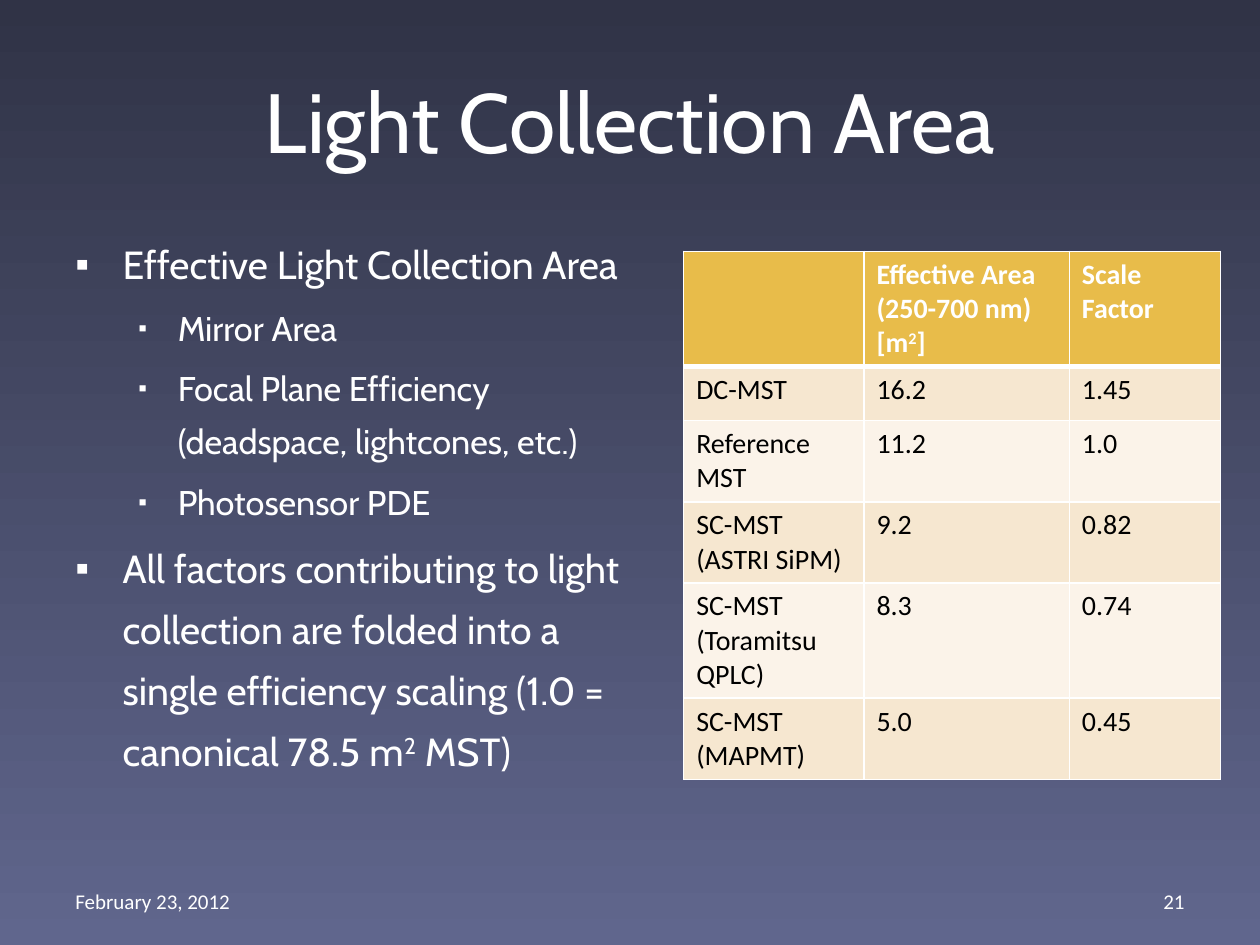
import pptx
import pptx.util
import pptx.dml.color
import pptx.enum.text
import pptx.oxml
import pptx.oxml.ns
from lxml import etree

Pt = pptx.util.Pt
ALIGN = pptx.enum.text.PP_ALIGN
ANCHOR = pptx.enum.text.MSO_ANCHOR
COLORS = {
    "top": "303346", "bottom": "60668D", "white": "FFFFFF", "black": "000000",
    "header": "E8BC4A", "odd": "F6E7D0", "even": "FBF3E9",
}
# Text between carets is superscript.
BULLETS = [
    (0, "Effective Light Collection Area"),
    (1, "Mirror Area"),
    (1, "Focal Plane Efficiency (deadspace, lightcones, etc.)"),
    (1, "Photosensor PDE"),
    (0, "All factors contributing to light collection are folded into a "
        "single efficiency scaling (1.0 = canonical 78.5 m^2^ MST)"),
]
LEVELS = [
    {"size": 22.4, "margin": 27, "indent": -27, "bullet": 100},
    {"size": 19.6, "margin": 58.5, "indent": -22.5, "bullet": 72},
]
TABLE = [
    ("", "Effective Area (250-700 nm) [m^2^]", "Scale Factor"),
    ("DC-MST", "16.2", "1.45"),
    ("Reference MST", "11.2", "1.0"),
    ("SC-MST (ASTRI SiPM)", "9.2", "0.82"),
    ("SC-MST (Toramitsu QPLC)", "8.3", "0.74"),
    ("SC-MST (MAPMT)", "5.0", "0.45"),
]
COLUMN_WIDTHS = [103, 117.4, 86.4]
ROW_HEIGHTS = [65.8, 30.9, 46.4, 46.4, 65.8, 46.4]


def rgb(name):
    return pptx.dml.color.RGBColor.from_string(COLORS[name])


def write(paragraph, text, color="white", **formats):
    for index, piece in enumerate(text.split("^")):
        if not piece:
            continue
        run = paragraph.add_run()
        run.text = piece
        run.font.color.rgb = rgb(color)
        for name, value in formats.items():
            setattr(run.font, name, value)
        if index % 2:
            run._r.get_or_add_rPr().set("baseline", "30000")


def place(shape, left, top, width, height):
    box = {"left": left, "top": top, "width": width, "height": height}
    for name, value in box.items():
        setattr(shape, name, Pt(value))


def add_text_box(slide, left, top, width, height, anchor=ANCHOR.TOP):
    shape = slide.shapes.add_textbox(Pt(left), Pt(top), Pt(width), Pt(height))
    shape.text_frame.word_wrap = True
    shape.text_frame.vertical_anchor = anchor
    return shape.text_frame


def set_background(slide):
    fill = slide.background.fill
    fill.gradient()
    fill.gradient_angle = 270
    for stop, name in zip(fill.gradient_stops, ("top", "bottom")):
        stop.color.rgb = rgb(name)


def set_title(slide, left, top, width, height):
    title = slide.shapes.title
    place(title, left, top, width, height)
    title.text_frame.vertical_anchor = ANCHOR.TOP
    paragraph = title.text_frame.paragraphs[0]
    paragraph.alignment = ALIGN.CENTER
    write(paragraph, "Light Collection Area", size=Pt(48), name="Cabin")


def set_bullet(paragraph, margin, indent, percent):
    properties = paragraph._p.get_or_add_pPr()
    properties.set("marL", str(Pt(margin)))
    properties.set("indent", str(Pt(indent)))
    for tag, name, value in (("a:buSzPct", "val", str(percent * 1000)),
                             ("a:buFont", "typeface", "Arial"),
                             ("a:buChar", "char", "▪")):
        etree.SubElement(properties, pptx.oxml.ns.qn(tag)).set(name, value)


def add_bullets(slide, left, top, width, height):
    frame = add_text_box(slide, left, top, width, height)
    for index, (level, text) in enumerate(BULLETS):
        paragraph = frame.add_paragraph() if index else frame.paragraphs[0]
        style = LEVELS[level]
        formats = {"level": level, "line_spacing": 1.3,
                   "space_before": Pt(style["size"] * 0.2)}
        for name, value in formats.items():
            setattr(paragraph, name, value)
        set_bullet(paragraph, style["margin"], style["indent"], style["bullet"])
        write(paragraph, text, size=Pt(style["size"]), name="Cabin")


def set_borders(cell, bottom_width):
    """Draw white lines on all sides; they must precede the cell's fill."""
    properties = cell._tc.get_or_add_tcPr()
    widths = {"L": 1, "R": 1, "T": 1, "B": bottom_width}
    for index, (side, width) in enumerate(widths.items()):
        line = pptx.oxml.parse_xml(
            f'<a:ln{side} {pptx.oxml.ns.nsdecls("a")} w="{Pt(width)}"><a:solidFill>'
            f'<a:srgbClr val="{COLORS["white"]}"/></a:solidFill></a:ln{side}>')
        properties.insert(index, line)


def add_area_table(slide, left, top):
    table = slide.shapes.add_table(
        len(TABLE), len(COLUMN_WIDTHS), Pt(left), Pt(top),
        Pt(sum(COLUMN_WIDTHS)), Pt(sum(ROW_HEIGHTS))).table
    for column, width in zip(table.columns, COLUMN_WIDTHS):
        column.width = Pt(width)
    for row_index, (row, height) in enumerate(zip(table.rows, ROW_HEIGHTS)):
        row.height = Pt(height)
        header = row_index == 0
        fill = "header" if header else ("even", "odd")[row_index % 2]
        for cell, text in zip(row.cells, TABLE[row_index]):
            cell.fill.solid()
            cell.fill.fore_color.rgb = rgb(fill)
            set_borders(cell, 3 if header else 1)
            write(cell.text_frame.paragraphs[0], text,
                  "white" if header else "black",
                  size=Pt(16), name="Calibri", bold=header)


def add_footer(slide, left, top, width, height):
    part_width = 168
    parts = [(left, "February 23, 2012", ALIGN.LEFT),
             (left + width - part_width, "21", ALIGN.RIGHT)]
    for part_left, text, alignment in parts:
        frame = add_text_box(slide, part_left, top, part_width, height, ANCHOR.MIDDLE)
        frame.paragraphs[0].alignment = alignment
        write(frame.paragraphs[0], text, size=Pt(12), name="Calibri")


def main():
    presentation = pptx.Presentation()
    presentation.slide_width, presentation.slide_height = Pt(720), Pt(540)
    slide = presentation.slides.add_slide(presentation.slide_layouts[5])
    set_background(slide)
    set_title(slide, 36, 36, 648, 90)
    add_bullets(slide, 36, 126, 345, 356.4)
    add_footer(slide, 36, 500.4, 648, 28.8)
    add_area_table(slide, 390.7, 143.7)
    presentation.save("out.pptx")


if __name__ == "__main__":
    main()
